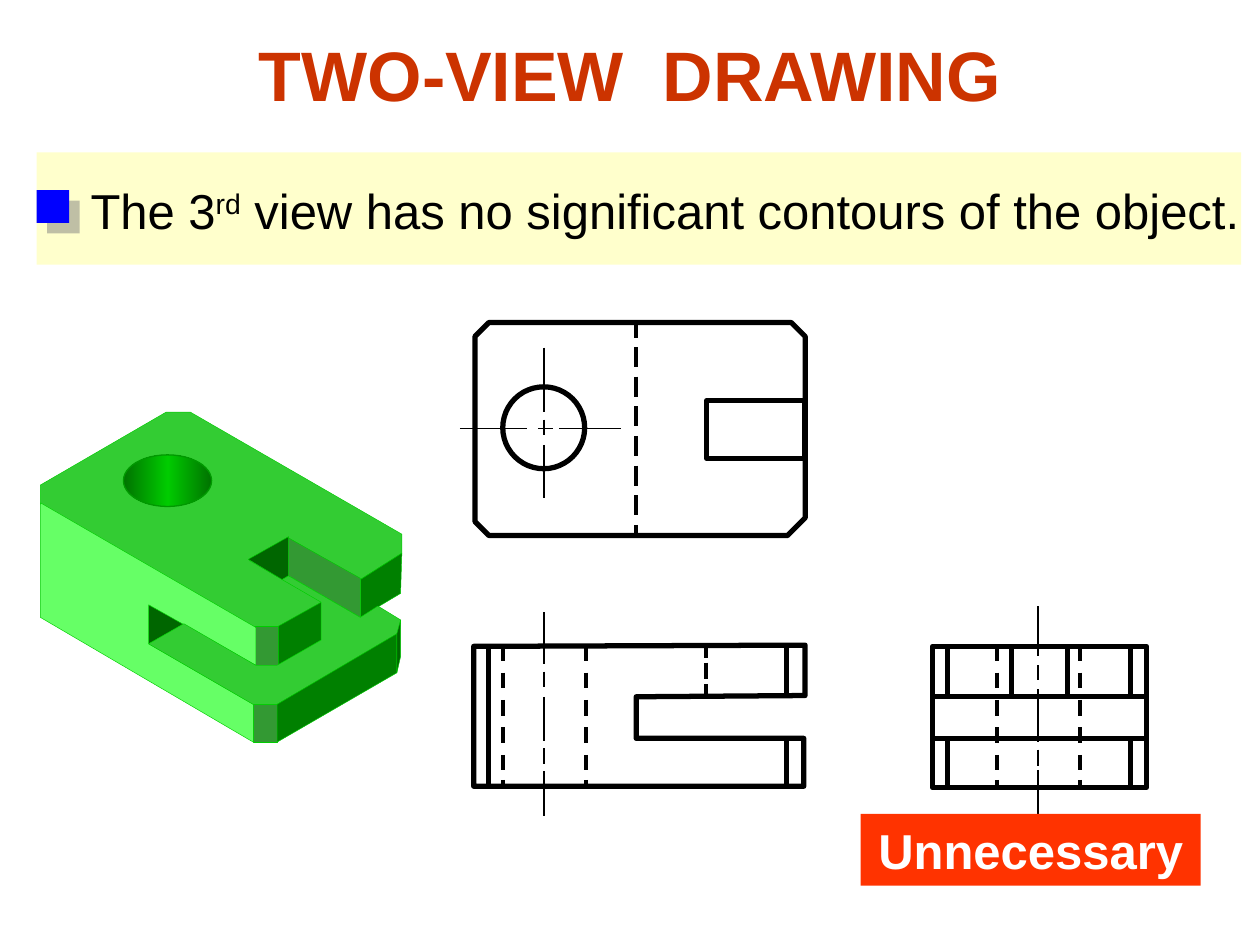
"""Draw the two-view drawing slide: an isometric block and its three projections."""
from dataclasses import dataclass
from itertools import pairwise, product
from typing import Any, Optional

from lxml import etree
from pptx import Presentation
from pptx import oxml
from pptx import util as u
from pptx.dml import color
from pptx.enum import dml, shapes, text

COLS, ROWS = 10, 7.5
UNIT = u.Inches(1)
STEP = 100

COLORS = {
    "ink": "000000", "white": "FFFFFF", "title": "CC3300", "alert": "FF3300",
    "banner": "FFFFCC", "bullet": "0000FF", "shade": "808080",
    "top": "33CC33", "bevel": "339933", "right": "008000", "slot": "006600",
    "front": "66FF66", "edge": "00CC00", "rim": "009900", "hole": "007200",
}

Point = tuple[float, float]


@dataclass(frozen=True)
class Pen:
    width: float
    ink: str = "ink"
    dash: Optional[dml.MSO_LINE] = None


@dataclass(frozen=True)
class Face:
    fill: str
    points: tuple[Point, ...]


@dataclass(frozen=True)
class Box:
    left: float
    top: float
    width: float
    height: float

    def place(self) -> list[int]:
        return [round(v * UNIT) for v in (self.left, self.top, self.width, self.height)]


THICK, HIDDEN, SOLID, CENTER = Pen(3), Pen(2.25, dash=dml.MSO_LINE.DASH), Pen(2.25), Pen(1)
EDGE, RIM = Pen(0.25, "edge"), Pen(0.75, "rim")

FACES = (
    Face("top", ((2.03, 4.98), (0.32, 4), (0.32, 3.85), (1.32, 3.27), (1.51, 3.27), (3.19, 4.24),
                 (3.19, 4.39), (2.86, 4.6), (2.29, 4.27), (1.98, 4.45), (2.56, 4.78), (2.2, 4.98))),
    Face("bevel", ((2.02, 4.97), (2.21, 4.97), (2.21, 5.28), (2.02, 5.28))),
    Face("bevel", ((2.01, 5.59), (2.2, 5.59), (2.2, 5.89), (2.01, 5.89))),
    Face("right", ((2.21, 4.97), (2.55, 4.78), (2.55, 5.08), (2.21, 5.28))),
    Face("right", ((2.86, 4.6), (3.19, 4.39), (3.18, 4.71), (2.86, 4.9))),
    Face("bevel", ((2.86, 4.9), (2.29, 4.57), (2.29, 4.27), (2.86, 4.59))),
    Face("slot", ((2.29, 4.57), (2.24, 4.6), (1.97, 4.44), (2.29, 4.26))),
    Face("slot", ((1.18, 4.8), (1.18, 5.11), (1.46, 4.95))),
    Face("front", ((0.32, 3.99), (0.32, 4.9), (2.01, 5.89), (2.01, 5.59), (1.18, 5.11),
                   (1.18, 4.8), (2.03, 5.28), (2.03, 4.98))),
    Face("top", ((1.46, 4.95), (1.18, 5.11), (2.01, 5.59), (2.2, 5.59), (3.17, 5.03), (3.18, 4.92),
                 (3, 4.81), (2.86, 4.9), (2.29, 4.57), (2.24, 4.6), (2.55, 4.78), (2.55, 5.08),
                 (2.2, 5.28), (2.03, 5.28))),
    Face("right", ((2.2, 5.59), (2.2, 5.89), (3.15, 5.34), (3.15, 5.03))),
    Face("slot", ((3.18, 4.92), (3.15, 5.03), (3.15, 5.34), (3.18, 5.21))),
)
FRONT_OUTLINE = ((6.39, 5.52), (6.39, 5.12), (3.76, 5.13), (3.76, 6.24), (6.38, 6.24),
                 (6.38, 5.86), (5.05, 5.86), (5.05, 5.53))
PLAN_OUTLINE = ((3.88, 2.56), (6.28, 2.56), (6.39, 2.67), (6.39, 4.11), (6.25, 4.25),
                (3.88, 4.25), (3.77, 4.14), (3.77, 2.67))


def rgb(name: str) -> color.RGBColor:
    return color.RGBColor.from_string(COLORS[name])


def apply(target: Any, values: dict[str, Any]) -> None:
    for name, value in values.items():
        setattr(target, name, value)


def style(shape: Any, fill: Optional[str] = None, pen: Optional[Pen] = None) -> None:
    shape.shadow.inherit = False
    if fill:
        shape.fill.solid()
        shape.fill.fore_color.rgb = rgb(fill)
    else:
        shape.fill.background()
    if pen:
        shape.line.color.rgb = rgb(pen.ink)
        shape.line.width = u.Pt(pen.width)
    else:
        shape.line.fill.background()


def preset(parent: Any, kind: shapes.MSO_SHAPE, box: Box, fill: Optional[str] = None,
           pen: Optional[Pen] = None) -> Any:
    shape = parent.shapes.add_shape(kind, *box.place())
    style(shape, fill, pen)
    return shape


def outline(parent: Any, points: tuple[Point, ...], pen: Pen, fill: Optional[str] = None,
            close: bool = True) -> None:
    first, *rest = [(round(x * STEP), round(y * STEP)) for x, y in points]
    builder = parent.shapes.build_freeform(*first, scale=UNIT / STEP)
    builder.add_line_segments(rest, close=close)
    style(builder.convert_to_shape(), fill, pen)


def stroke(parent: Any, start: Point, end: Point, pen: Pen) -> None:
    ends = [round(v * UNIT) for v in (*start, *end)]
    line = parent.shapes.add_connector(shapes.MSO_CONNECTOR.STRAIGHT, *ends)
    apply(line.line, {"width": u.Pt(pen.width), "dash_style": pen.dash})
    line.line.color.rgb = rgb(pen.ink)
    etree.SubElement(line._element.spPr, oxml.ns.qn("a:effectLst"))


def uprights(parent: Any, x: float, spans: tuple[Point, ...], pen: Pen) -> None:
    for top, bottom in spans:
        stroke(parent, (x, top), (x, bottom), pen)


def hidden_hole(parent: Any, columns: tuple[float, float]) -> None:
    for x in columns:
        uprights(parent, x, ((5.12, 6.25),), HIDDEN)
        uprights(parent, x, ((6.19, 6.25),), SOLID)


def write(shape: Any, spans: list[tuple[str, int]], frame: dict[str, Any],
          layout: dict[str, Any], font: dict[str, Any], ink: str) -> None:
    apply(shape.text_frame, frame)
    para = shape.text_frame.paragraphs[0]
    apply(para, layout)
    for words, raised in spans:
        span = para.add_run()
        span.text = words
        apply(span.font, {"name": "Arial", **font})
        span.font.color.rgb = rgb(ink)
        if raised:
            span._r.get_or_add_rPr().set("baseline", str(raised * 1000))


def draw_block(page: Any) -> None:
    block = page.shapes.add_group_shape()
    for face in FACES:
        outline(block, face.points, EDGE, face.fill)
    hole = preset(block, shapes.MSO_SHAPE.OVAL, Box(0.98, 3.61, 0.7, 0.41), pen=RIM)
    stops = "".join(f'<a:gs pos="{pos}"><a:srgbClr val="{COLORS[name]}"/></a:gs>'
                    for pos, name in ((0, "hole"), (50000, "edge"), (100000, "hole")))
    gradient = oxml.parse_xml(f'<a:gradFill {oxml.ns.nsdecls("a")}><a:gsLst>{stops}</a:gsLst>'
                              '<a:lin ang="0" scaled="0"/></a:gradFill>')
    props = hole._element.spPr
    props.replace(props.find(oxml.ns.qn("a:noFill")), gradient)


def draw_front(page: Any) -> None:
    view = page.shapes.add_group_shape()
    outline(view, FRONT_OUTLINE, THICK)
    uprights(view, 5.6, ((5.12, 5.22), (5.26, 5.39), (5.43, 5.53)), SOLID)
    uprights(view, 3.88, ((5.13, 6.24),), THICK)
    hidden_hole(view, (3.99, 4.65))
    uprights(view, 6.24, ((5.12, 5.52), (5.85, 6.26)), THICK)
    uprights(view, 4.32, ((4.86, 5.27), (5.33, 5.45), (5.53, 5.88), (5.94, 6.06), (6.12, 6.48)), CENTER)


def draw_plan(page: Any) -> None:
    view = page.shapes.add_group_shape()
    outline(view, PLAN_OUTLINE, THICK)
    preset(view, shapes.MSO_SHAPE.OVAL, Box(3.99, 3.07, 0.65, 0.65), pen=THICK)
    preset(view, shapes.MSO_SHAPE.RECTANGLE, Box(5.61, 3.18, 0.78, 0.46), pen=THICK)
    for left, right in ((3.65, 4.18), (4.27, 4.39), (4.44, 4.93)):
        stroke(view, (left, 3.4), (right, 3.4), CENTER)
    uprights(view, 4.32, ((2.76, 3.27), (3.33, 3.45), (3.53, 3.95)), CENTER)
    starts = [2.52 + 0.235 * i for i in range(8)]
    dashes = tuple((max(y, 2.56), min(y + 0.16, 4.26)) for y in starts)
    uprights(view, 5.05, dashes, SOLID)


def draw_side(page: Any) -> None:
    view = page.shapes.add_group_shape()
    preset(view, shapes.MSO_SHAPE.RECTANGLE, Box(7.4, 5.13, 1.7, 1.12), pen=THICK)
    for (inner, outer), (edge, ledge) in product(((7.52, 7.39), (8.97, 9.1)), ((5.12, 5.53), (6.25, 5.86))):
        outline(view, ((inner, edge), (inner, ledge), (outer, ledge)), THICK, close=False)
    for y in (5.86, 5.53):
        stroke(view, (7.39, y), (9.1, y), THICK)
    for x in (8.03, 8.47):
        uprights(view, x, ((5.12, 5.53),), THICK)
    hidden_hole(view, (7.91, 8.57))
    uprights(view, 8.24, ((4.81, 5.21), (5.28, 5.4), (5.47, 5.89), (5.95, 6.08), (6.11, 6.47)), CENTER)


def draw_labels(page: Any) -> None:
    centered = {"alignment": text.PP_ALIGN.CENTER}
    title = page.shapes.add_textbox(*Box(0, 0.2, COLS, 0.77).place())
    write(title, [("TWO-VIEW  DRAWING", 0)], {"word_wrap": True}, centered,
          {"size": u.Pt(40), "bold": True}, "title")
    alert = preset(page, shapes.MSO_SHAPE.RECTANGLE, Box(6.83, 6.46, 2.7, 0.57), "alert")
    write(alert, [("Unnecessary", 0)],
          {"margin_left": 0, "margin_right": 0, "vertical_anchor": text.MSO_ANCHOR.TOP},
          centered, {"size": u.Pt(28), "bold": True}, "white")
    preset(page, shapes.MSO_SHAPE.RECTANGLE, Box(0.29, 1.21, 9.56, 0.89), "banner")
    note = page.shapes.add_textbox(*Box(0.62, 1.24, 9.38, 0.71).place())
    write(note, [("The 3", 0), ("rd", 30), (" view has no significant contours of the object.", 0)],
          {"word_wrap": False}, {"line_spacing": 1.3}, {"size": u.Pt(28)}, "ink")
    bullet = preset(page, shapes.MSO_SHAPE.RECTANGLE, Box(0.29, 1.51, 0.26, 0.26), "bullet")
    effects = bullet._element.spPr.find(oxml.ns.qn("a:effectLst"))
    effects.append(oxml.parse_xml(
        f'<a:outerShdw {oxml.ns.nsdecls("a")} dist="{u.Pt(8.5)}" dir="2700000" algn="ctr" rotWithShape="0">'
        f'<a:srgbClr val="{COLORS["shade"]}"><a:alpha val="50000"/></a:srgbClr></a:outerShdw>'))


def main() -> None:
    deck = Presentation()
    apply(deck, {"slide_width": COLS * UNIT, "slide_height": round(ROWS * UNIT)})
    page = deck.slides.add_slide(deck.slide_layouts[6])
    for draw in (draw_block, draw_front, draw_plan, draw_side, draw_labels):
        draw(page)
    deck.save("out.pptx")


if __name__ == "__main__":
    main()
